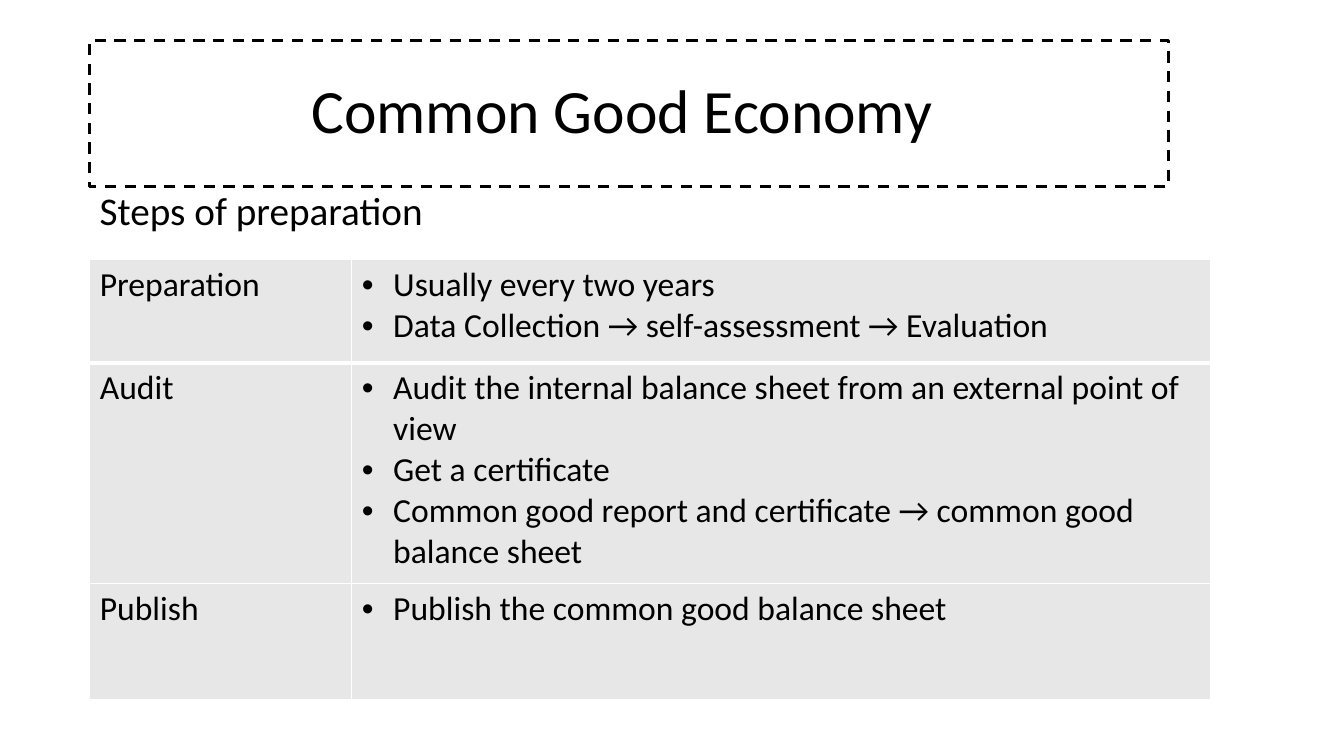
from lxml import etree
from pptx import Presentation
from pptx.dml.color import RGBColor
from pptx.enum import dml, shapes, text
from pptx.oxml import ns
from pptx import util as u

WIDTH, HEIGHT = 13.33, 7.5
LEFT = 0.89 / WIDTH
FONT = "Calibri"
COLORS = {"ink": "000000", "cell": "E7E7E7", "rule": "FFFFFF"}
TABLE_WIDTH = 11.12 / WIDTH
COLUMN_SHARES = (2.6 / 11.12, 8.52 / 11.12)
ROW_HEIGHTS = (1.03 / HEIGHT, 2.19 / HEIGHT, 1.15 / HEIGHT)
STEPS = (
    ("Preparation", (
        "Usually every two years",
        "Data Collection → self-assessment → Evaluation",
    )),
    ("Audit", (
        "Audit the internal balance sheet from an external point of view",
        "Get a certificate",
        "Common good report and certificate → common good balance sheet",
    )),
    ("Publish", ("Publish the common good balance sheet",)),
)


def across(share):
    return u.Inches(WIDTH * share)


def down(share):
    return u.Inches(HEIGHT * share)


def color(name):
    return RGBColor.from_string(COLORS[name])


def write(paragraph, words, size):
    run = paragraph.add_run()
    run.text = words
    run.font.name = FONT
    run.font.size = u.Pt(size)
    run.font.color.rgb = color("ink")


def add_title(slide, words, top, width, height):
    shape = slide.shapes.add_shape(
        shapes.MSO_SHAPE.RECTANGLE,
        across(LEFT), down(top), across(width), down(height))
    shape.shadow.inherit = False
    shape.fill.background()
    shape.line.color.rgb = color("ink")
    shape.line.width = u.Pt(2)
    shape.line.dash_style = dml.MSO_LINE.DASH
    frame = shape.text_frame
    frame.word_wrap = True
    frame.vertical_anchor = text.MSO_ANCHOR.MIDDLE
    paragraph = frame.paragraphs[0]
    paragraph.alignment = text.PP_ALIGN.CENTER
    paragraph.line_spacing = 0.9
    write(paragraph, words, 44)


def add_subtitle(slide, words, top, width, height):
    box = slide.shapes.add_textbox(
        across(LEFT), down(top), across(width), down(height))
    box.text_frame.word_wrap = True
    paragraph = box.text_frame.paragraphs[0]
    paragraph.line_spacing = 0.9
    write(paragraph, words, 28)


def add_bullet(paragraph):
    properties = paragraph._p.get_or_add_pPr()
    properties.set("marL", str(u.Inches(0.31)))
    properties.set("indent", str(-u.Inches(0.31)))
    font = etree.SubElement(properties, ns.qn("a:buFont"))
    font.set("typeface", "Arial")
    etree.SubElement(properties, ns.qn("a:buChar")).set("char", "•")


def set_borders(cell, top, bottom):
    """Rule all four sides; top and bottom are widths in points."""
    properties = cell._tc.get_or_add_tcPr()
    widths = {"a:lnL": 1, "a:lnR": 1, "a:lnT": top, "a:lnB": bottom}
    for position, (side, points) in enumerate(widths.items()):
        line = etree.Element(ns.qn(side), w=str(u.Pt(points)))
        fill = etree.SubElement(line, ns.qn("a:solidFill"))
        etree.SubElement(fill, ns.qn("a:srgbClr"), val=COLORS["rule"])
        properties.insert(position, line)


def fill_cell(cell, lines, bulleted):
    cell.fill.solid()
    cell.fill.fore_color.rgb = color("cell")
    frame = cell.text_frame
    for index, words in enumerate(lines):
        paragraph = frame.add_paragraph() if index else frame.paragraphs[0]
        if bulleted:
            add_bullet(paragraph)
        write(paragraph, words, 24)


def add_steps_table(slide, top):
    table = slide.shapes.add_table(
        len(STEPS), len(COLUMN_SHARES), across(LEFT), down(top),
        across(TABLE_WIDTH), down(sum(ROW_HEIGHTS))).table
    table.first_row = False
    table.horz_banding = False
    for column, share in zip(table.columns, COLUMN_SHARES):
        column.width = across(TABLE_WIDTH * share)
    for index, (step, details) in enumerate(STEPS):
        table.rows[index].height = down(ROW_HEIGHTS[index])
        fill_cell(table.cell(index, 0), (step,), bulleted=False)
        fill_cell(table.cell(index, 1), details, bulleted=True)
        for cell in table.rows[index].cells:
            set_borders(cell, top=3 if index == 1 else 1,
                        bottom=3 if index == 0 else 1)


def main():
    presentation = Presentation()
    presentation.slide_width = u.Inches(WIDTH)
    presentation.slide_height = u.Inches(HEIGHT)
    slide = presentation.slides.add_slide(presentation.slide_layouts[6])
    add_title(slide, "Common Good Economy ", top=0.4 / HEIGHT,
              width=10.7 / WIDTH, height=1.45 / HEIGHT)
    add_subtitle(slide, "Steps of preparation", top=1.85 / HEIGHT,
                 width=11.52 / WIDTH, height=4.76 / HEIGHT)
    add_steps_table(slide, top=2.57 / HEIGHT)
    presentation.save("out.pptx")


if __name__ == "__main__":
    main()
